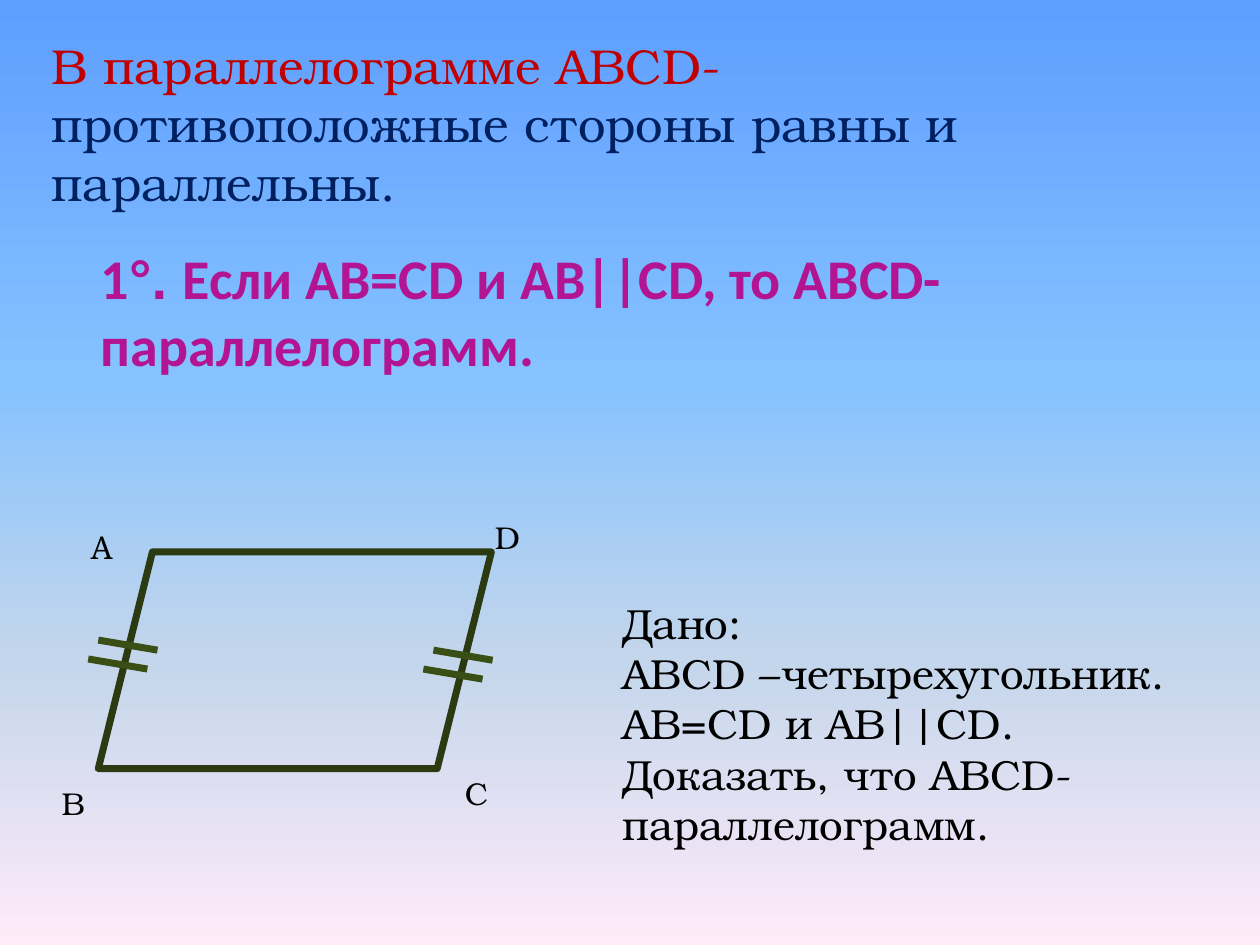
from copy import deepcopy
from dataclasses import dataclass

from pptx import Presentation
from pptx.dml.color import RGBColor as Rgb
from pptx.enum.shapes import MSO_CONNECTOR as Link, MSO_SHAPE as Form
from pptx.enum.text import MSO_ANCHOR as Anchor, MSO_AUTO_SIZE as Fit, PP_ALIGN as Align
from pptx.oxml.ns import qn
from pptx.oxml.xmlchemy import OxmlElement as Node
from pptx.util import Inches, Pt


@dataclass(frozen=True)
class Theme:
    sky: tuple = ((0, "5E9EFF"), (0.4, "85C2FF"), (0.7, "C4D6EB"), (1, "FFEBFA"))
    red: str = "C00000"
    navy: str = "002060"
    plum: str = "B31492"
    ink: str = "000000"
    edge: str = "2C3A12"
    tick: str = "3A4F16"
    serif: str = "TeX Gyre Bonum"
    sans: str = "Calibri"
    head: int = 32
    lead: int = 28
    body: int = 24
    mark: int = 18
    line: int = 4


LOOK = Theme()


def style(run, face, size, hue, bold=False):
    font = run.font
    font.name, font.size, font.bold = face, Pt(size), bold
    font.color.rgb = Rgb.from_string(hue)


def stroke(line, hue):
    line.color.rgb = Rgb.from_string(hue)
    line.width = Pt(LOOK.line)


def paint(slide):
    fill = slide.background.fill
    fill.gradient()
    fill.gradient_angle = 270
    stops = slide.element.find(".//" + qn("a:gsLst"))
    while len(stops) < len(LOOK.sky):
        stops.append(deepcopy(stops[0]))
    for stop, (place, hue) in zip(fill.gradient_stops, LOOK.sky):
        stop.position = place
        stop.color.rgb = Rgb.from_string(hue)


def add_text(slide, box, lines, size, face=LOOK.serif):
    frame = slide.shapes.add_textbox(*map(Inches, box)).text_frame
    frame.word_wrap = True
    frame.text = "\n".join(lines)
    for para in frame.paragraphs:
        for run in para.runs:
            style(run, face, size, LOOK.ink)
    return frame


def add_title(slide, box):
    title = slide.shapes.title
    title.left, title.top, title.width, title.height = map(Inches, box)
    frame = title.text_frame
    frame.auto_size = Fit.NONE
    frame.vertical_anchor = Anchor.BOTTOM
    frame.margin_bottom = Inches(0.59)
    para = frame.paragraphs[0]
    para.alignment = Align.LEFT
    parts = (("1", LOOK.sans), ("°. ", "Arial"),
             ("Если AB=CD и AB||CD, то ABCD-параллелограмм.", LOOK.sans))
    for words, face in parts:
        run = para.add_run()
        run.text = words
        style(run, face, LOOK.head, LOOK.plum, True)


def add_lead(slide, box):
    frame = add_text(slide, box, ["В параллелограмме АBCD- "], LOOK.lead)
    frame.margin_right = Inches(0.3)
    para = frame.paragraphs[0]
    style(para.runs[0], LOOK.serif, LOOK.lead, LOOK.red)
    run = para.add_run()
    run.text = "противоположные стороны равны и параллельны."
    style(run, LOOK.serif, LOOK.lead, LOOK.navy)


def add_ticks(slide, left, top):
    group = slide.shapes.add_group_shape()
    for step in range(2):
        x, y = left - 0.08 * step, top + 0.15 * step
        tick = group.shapes.add_connector(
            Link.STRAIGHT, *map(Inches, (x, y, x + 0.47, y + 0.08)))
        stroke(tick.line, LOOK.tick)
        tick.element.spPr.append(Node("a:effectLst"))


def add_figure(slide, box):
    left, top, width, height = box
    shape = slide.shapes.add_shape(Form.PARALLELOGRAM, *map(Inches, box))
    shape.shadow.inherit = False
    shape.fill.background()
    stroke(shape.line, LOOK.edge)
    marks = (("А", -0.16, -0.24, "Cambria"), ("B", -0.39, 1.79, LOOK.serif),
             ("C", 2.81, 1.71, LOOK.serif), ("D", 3.05, -0.32, LOOK.serif))
    for name, dx, dy, face in marks:
        add_text(slide, (left + dx, top + dy, 0.31, 0.4), [name], LOOK.mark, face)
    add_ticks(slide, left, top + 0.7)
    add_ticks(slide, left + width - 0.46, top + 0.78)


def add_given(slide, box):
    add_text(slide, box, ["Дано:", "ABCD –четырехугольник. AB=CD и AB||CD.",
                          "Доказать, что ABCD-параллелограмм."], LOOK.body)


def main():
    deck = Presentation()
    deck.slide_width, deck.slide_height = Inches(10), Inches(7.5)
    slide = deck.slides.add_slide(deck.slide_layouts[5])
    paint(slide)
    add_title(slide, (0.7, 1.95, 8.53, 1.64))
    add_figure(slide, (0.78, 4.38, 3.12, 1.72))
    add_given(slide, (4.84, 4.69, 4.92, 2.12))
    add_lead(slide, (0.31, 0.23, 9.14, 1.04))
    deck.save("out.pptx")


if __name__ == "__main__":
    main()
